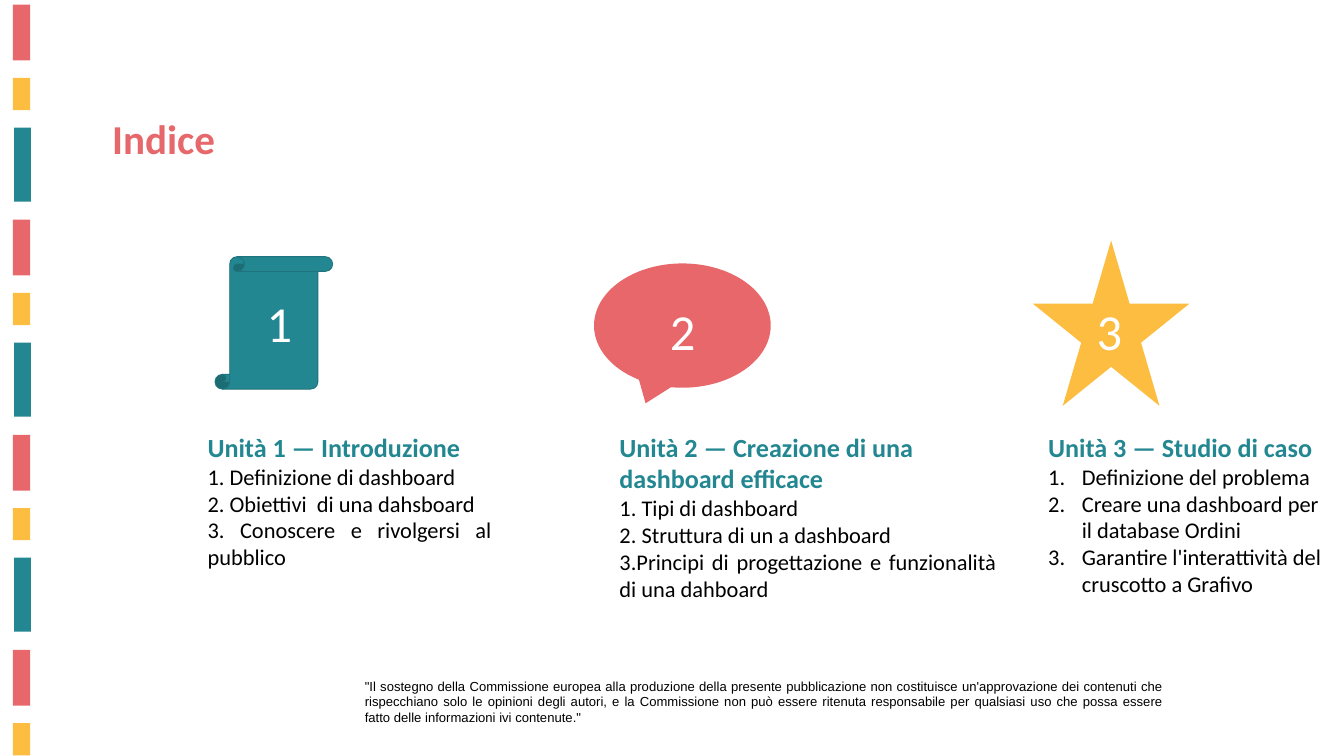
from lxml import etree
from pptx import Presentation
from pptx.dml.color import RGBColor
from pptx.enum.shapes import MSO_SHAPE
from pptx.enum.text import MSO_ANCHOR, MSO_AUTO_SIZE, PP_ALIGN
from pptx.oxml.ns import qn
from pptx.util import Pt

PX = 9144  # 100 px to the inch
LEFT, JUSTIFY = PP_ALIGN.LEFT, PP_ALIGN.JUSTIFY
RECTANGLE = MSO_SHAPE.RECTANGLE
SCROLL, CALLOUT, STAR = (
    MSO_SHAPE.VERTICAL_SCROLL, MSO_SHAPE.OVAL_CALLOUT, MSO_SHAPE.STAR_5_POINT)
TOP = MSO_ANCHOR.TOP
NO_AUTOFIT = MSO_AUTO_SIZE.NONE

CORAL = RGBColor(0xE8, 0x67, 0x6A)
TITLE_CORAL = RGBColor(0xE7, 0x68, 0x6A)
GOLD = RGBColor(0xFD, 0xBD, 0x40)
TEAL = RGBColor(0x23, 0x87, 0x91)
DARK_TEAL = RGBColor(0x1E, 0x73, 0x7C)
BLACK = RGBColor(0, 0, 0)
WHITE = RGBColor(255, 255, 255)

SLIDE_WIDTH, SLIDE_HEIGHT = 2000, 1125

# Side stripe: left, top, width, height, colour; the group repeats downwards
STRIPE = [
    (19, 7, 26, 83, CORAL),
    (19, 116, 26, 48, GOLD),
    (21, 190, 25, 110, TEAL),
]
STRIPE_PERIOD = 320

TITLE = "Indice"
DISCLAIMER = (
    "\"Il sostegno della Commissione europea alla produzione della presente "
    "pubblicazione non costituisce un'approvazione dei contenuti che rispecchiano "
    "solo le opinioni degli autori, e la Commissione non può essere ritenuta "
    "responsabile per qualsiasi uso che possa essere fatto delle informazioni ivi "
    "contenute.\""
)

UNITS = [
    {
        "heading": "Unità 1 — Introduzione",
        "topics": ["1. Definizione di dashboard",
                   "2. Obiettivi  di una dahsboard",
                   "3. Conoscere e rivolgersi al pubblico"],
        "numbered": False,
        "box": (299, 637, 442, 266),
        "icon": (SCROLL, (320, 382, 175, 197), TEAL, DARK_TEAL),
        "number_box": (387, 430, 158, 101),
    },
    {
        "heading": "Unità 2 — Creazione di una dashboard efficace",
        "topics": ["1. Tipi di dashboard",
                   "2. Struttura di un a dashboard",
                   "3.Principi di progettazione e funzionalità di una dahboard"],
        "numbered": False,
        "box": (912, 637, 580, 266),
        "icon": (CALLOUT, (884, 392, 263, 185), CORAL, None),
        "number_box": (987, 441, 108, 101),
    },
    {
        "heading": "Unità 3 — Studio di caso",
        "topics": ["Definizione del problema",
                   "Creare una dashboard per il database Ordini",
                   "Garantire l'interattività del cruscotto a Grafivo"],
        "numbered": True,
        "box": (1550, 637, 442, 300),
        "icon": (STAR, (1537, 358, 233, 246), GOLD, None),
        "number_box": (1622, 441, 150, 101),
    },
]


def emu(box):
    return [value * PX for value in box]


def add_filled(slide, preset, box, fill, outline=None):
    shape = slide.shapes.add_shape(preset, *emu(box))
    shape.shadow.inherit = False
    shape.fill.solid()
    shape.fill.fore_color.rgb = fill
    if outline is None:
        shape.line.fill.background()
    else:
        shape.line.color.rgb = outline
        shape.line.width = Pt(1)


def add_frame(slide, box):
    frame = slide.shapes.add_textbox(*emu(box)).text_frame
    frame.word_wrap = True
    return frame


def write(paragraph, text, size, color, bold=False, align=LEFT, font="Calibri"):
    paragraph.text = text
    paragraph.alignment = align
    paragraph.font.name = font
    paragraph.font.size = Pt(size)
    paragraph.font.bold = bold
    paragraph.font.color.rgb = color


def number_automatically(paragraph):
    properties = paragraph._p.get_or_add_pPr()
    properties.set("marL", str(50 * PX))
    properties.set("indent", str(-50 * PX))
    etree.SubElement(properties, qn("a:buAutoNum"), type="arabicPeriod")


def add_stripes(slide):
    for offset in range(0, SLIDE_HEIGHT, STRIPE_PERIOD):
        for left, top, width, height, color in STRIPE:
            if top + offset < SLIDE_HEIGHT:
                add_filled(slide, RECTANGLE, (left, top + offset, width, height), color)


def add_title(slide):
    title = slide.shapes.title
    title.left, title.top, title.width, title.height = emu((157, 164, 677, 84))
    frame = title.text_frame
    frame.auto_size = NO_AUTOFIT
    frame.vertical_anchor = TOP
    write(frame.paragraphs[0], TITLE, 44, TITLE_CORAL, bold=True)


def add_unit(slide, number, unit):
    preset, icon_box, fill, outline = unit["icon"]
    add_filled(slide, preset, icon_box, fill, outline)
    write(add_frame(slide, unit["number_box"]).paragraphs[0], str(number), 54, WHITE)

    frame = add_frame(slide, unit["box"])
    write(frame.paragraphs[0], unit["heading"], 28, TEAL, bold=True)
    for topic in unit["topics"]:
        paragraph = frame.add_paragraph()
        if unit["numbered"]:
            number_automatically(paragraph)
        write(paragraph, topic, 24, BLACK, align=LEFT if unit["numbered"] else JUSTIFY)


def main():
    presentation = Presentation()
    presentation.slide_width = SLIDE_WIDTH * PX
    presentation.slide_height = SLIDE_HEIGHT * PX
    slide = presentation.slides.add_slide(presentation.slide_layouts[5])

    add_stripes(slide)
    disclaimer = add_frame(slide, (533, 1004, 1208, 81)).paragraphs[0]
    write(disclaimer, DISCLAIMER, 14, BLACK, align=JUSTIFY, font="Arial")
    add_title(slide)
    for number, unit in enumerate(UNITS, start=1):
        add_unit(slide, number, unit)

    presentation.save("out.pptx")


if __name__ == "__main__":
    main()
